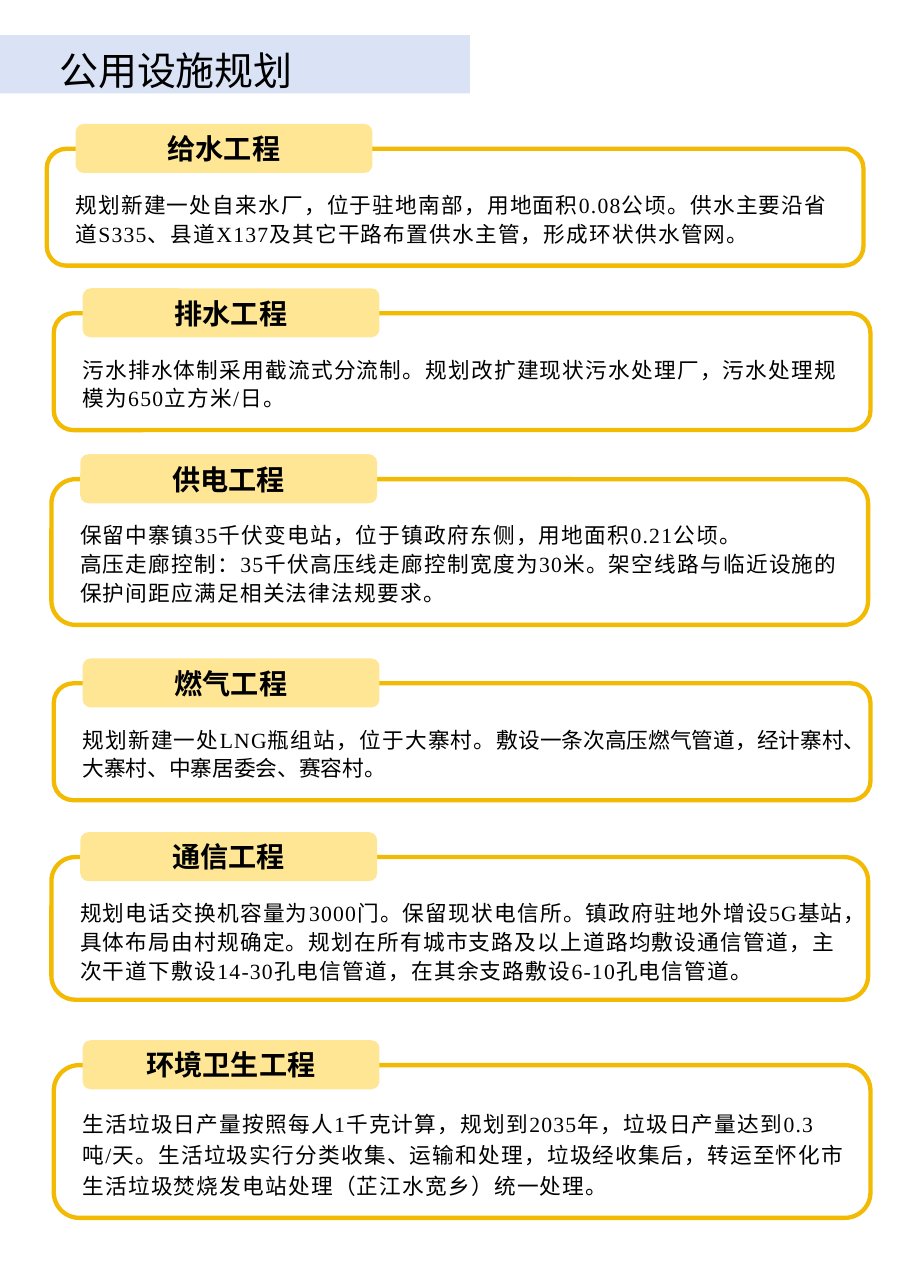
from lxml.etree import SubElement
from pptx import Presentation
from pptx.dml.color import RGBColor
from pptx.enum.shapes import MSO_SHAPE as Shape
from pptx.enum.text import MSO_ANCHOR as Anchor, PP_ALIGN as Align
from pptx.oxml.ns import qn
from pptx.util import Inches, Pt

COLUMNS, ROWS = 116.9, 165.3
BLUE, GOLD, CREAM, BLACK = "DAE3F5", "F2BA02", "FEE695", "000000"
HEADING_FONT, BODY_FONT, PLAIN_FONT = "Noto Sans CJK SC", "Times New Roman", "Calibri"
BODY_SPACING = 1.1


def color(value):
    return RGBColor.from_string(value)


class Page:
    """Places elements on a slide measured in grid columns and rows."""

    def __init__(self, presentation):
        self.slide = presentation.slides.add_slide(presentation.slide_layouts[6])
        self.shapes = self.slide.shapes
        self.column = presentation.slide_width / COLUMNS
        self.row = presentation.slide_height / ROWS

    def place(self, left, top, width, height):
        return (round(left * self.column), round(top * self.row),
                round(width * self.column), round(height * self.row))

    def box(self, kind, area, fill=None, line=None):
        shape = self.shapes.add_shape(kind, *self.place(*area))
        shape.shadow.inherit = False
        if fill:
            shape.fill.solid()
            shape.fill.fore_color.rgb = color(fill)
        else:
            shape.fill.background()
        if line:
            shape.line.color.rgb = color(line)
            shape.line.width = Pt(4)
        else:
            shape.line.fill.background()
        return shape

    def run(self, paragraph, text, size, font=HEADING_FONT, bold=False, spacing=0):
        run = paragraph.add_run()
        run.text = text
        run.font.size = Pt(size)
        run.font.bold = bold
        run.font.name = font
        run.font.color.rgb = color(BLACK)
        properties = run.font._element
        properties.set("lang", "zh-CN")
        properties.set("spc", str(round(spacing * 100)))
        SubElement(properties, qn("a:ea")).set("typeface", HEADING_FONT)

    def text(self, area, paragraphs, size, leading):
        """Adds a text box; each paragraph is a list of (text, font, spacing)."""
        frame = self.shapes.add_textbox(*self.place(*area)).text_frame
        frame.word_wrap = True
        for index, runs in enumerate(paragraphs):
            paragraph = frame.add_paragraph() if index else frame.paragraphs[0]
            paragraph.line_spacing = Pt(leading)
            for text, font, spacing in runs:
                self.run(paragraph, text, size, font, spacing=spacing)

    def title(self, text):
        self.box(Shape.RECTANGLE, (0, 4.5, 60.3, 7.5), fill=BLUE)
        self.text((6.6, 5.8, 77.2, 11.1), [[(text, HEADING_FONT, 0)]], 36, 41)

    def section(self, heading, left, top, height, paragraphs, leading=26.5):
        """Groups a gold frame, the heading tab on its edge and the body text."""
        self.shapes = self.slide.shapes.add_group_shape().shapes
        self.box(Shape.ROUNDED_RECTANGLE, (left, top, 104.8, height), line=GOLD)
        tab = self.box(Shape.ROUNDED_RECTANGLE, (left + 3.7, top - 3.2, 38.1, 6.3), fill=CREAM)
        tab.text_frame.vertical_anchor = Anchor.MIDDLE
        paragraph = tab.text_frame.paragraphs[0]
        paragraph.alignment = Align.CENTER
        self.run(paragraph, heading, 26, bold=True)
        self.text((left + 2.7, top + 4.7, 101.1, height - 4.7), paragraphs, 20, leading)
        self.shapes = self.slide.shapes


def body(text):
    return [(text, BODY_FONT, BODY_SPACING)]


SECTIONS = [
    ("给水工程", 6, 19.1, 15, [body(
        "规划新建一处自来水厂，位于驻地南部，用地面积0.08公顷。供水主要沿省道S335、"
        "县道X137及其它干路布置供水主管，形成环状供水管网。")]),
    ("排水工程", 6.9, 40.2, 15, [body(
        "污水排水体制采用截流式分流制。规划改扩建现状污水处理厂，"
        "污水处理规模为650立方米/日。")]),
    ("供电工程", 6.6, 61.5, 18.7, [
        body("保留中寨镇35千伏变电站，位于镇政府东侧，用地面积0.21公顷。"),
        body("高压走廊控制：35千伏高压线走廊控制宽度为30米。"
             "架空线路与临近设施的保护间距应满足相关法律法规要求。")]),
    ("燃气工程", 6.9, 87.7, 15, [
        body("规划新建一处LNG瓶组站，位于大寨村。")
        + [("敷设一条次高压燃气管道，经计寨村、大寨村、中寨居委会、赛容村", PLAIN_FONT, 0)]
        + body("。")]),
    ("通信工程", 6.6, 110, 18.3, [body(
        "规划电话交换机容量为3000门。保留现状电信所。镇政府驻地外增设5G基站，"
        "具体布局由村规确定。规划在所有城市支路及以上道路均敷设通信管道，"
        "主次干道下敷设14-30孔电信管道，在其余支路敷设6-10孔电信管道。")]),
    ("环境卫生工程", 6.9, 136.7, 19.6, [body(
        "生活垃圾日产量按照每人1千克计算，规划到2035年，垃圾日产量达到0.3吨/天。"
        "生活垃圾实行分类收集、运输和处理，垃圾经收集后，"
        "转运至怀化市生活垃圾焚烧发电站处理（芷江水宽乡）统一处理。")], 28.7),
]


def main():
    presentation = Presentation()
    presentation.slide_width, presentation.slide_height = Inches(11.69), Inches(16.53)
    page = Page(presentation)
    page.title("公用设施规划")
    for section in SECTIONS:
        page.section(*section)
    presentation.save("out.pptx")


if __name__ == "__main__":
    main()
